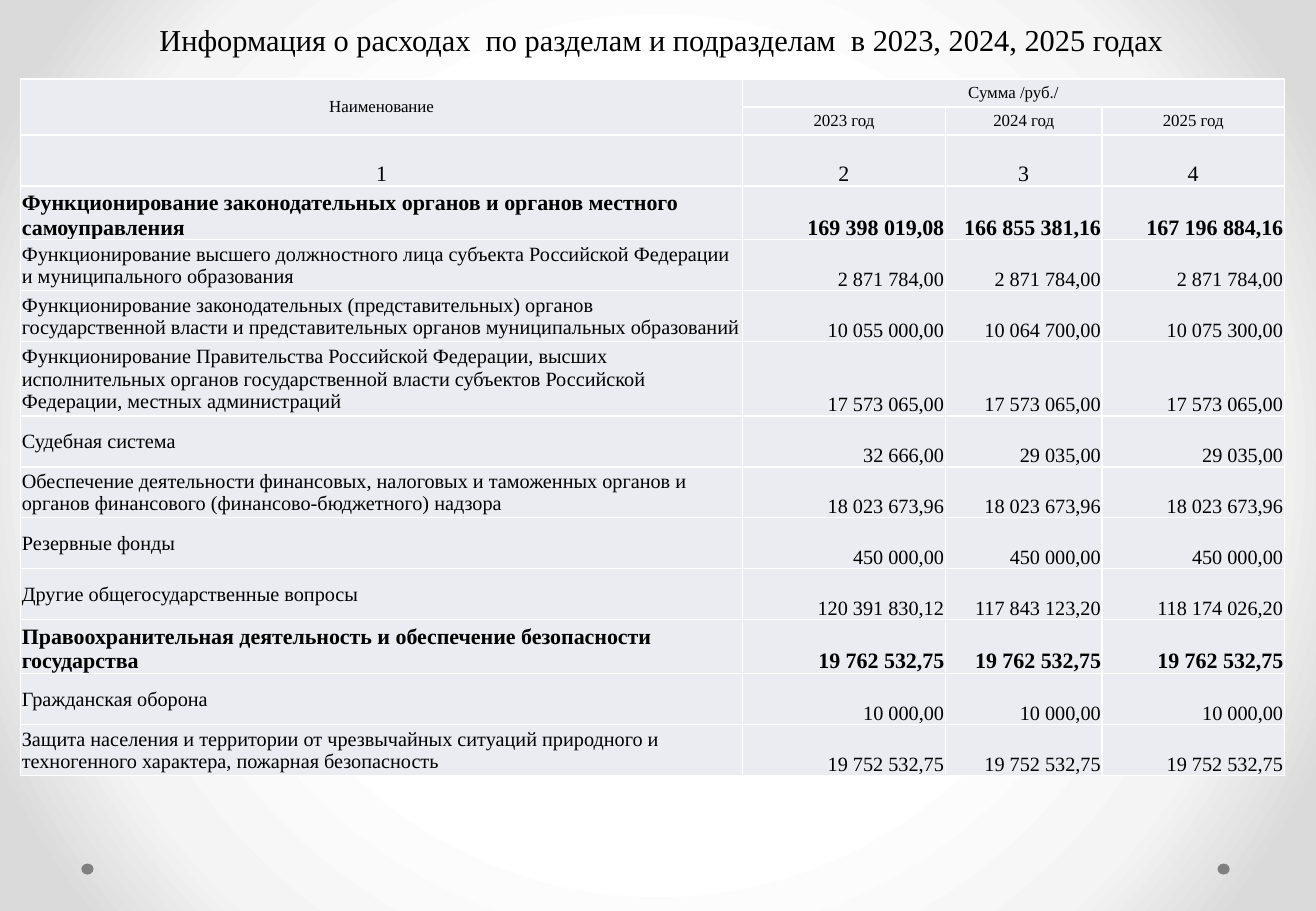
from dataclasses import dataclass

import lxml.etree
import pptx
import pptx.dml.color
import pptx.enum.shapes
import pptx.enum.text
import pptx.oxml
import pptx.oxml.ns
import pptx.util

Inches = pptx.util.Inches
ALIGN = pptx.enum.text.PP_ALIGN
ANCHOR = pptx.enum.text.MSO_ANCHOR

FONT = "Times New Roman"
COLORS = {"text": "000000", "cell": "EAECF2", "border": "FFFFFF", "dot": "808080"}
BACKGROUND_STOPS = {50: "FFFFFF", 76: "F4F4F4", 92: "DADADA"}
COLUMN_WIDTHS = [5.94, 1.67, 1.29, 1.5]
HEADER_HEIGHT, ROW_HEIGHT = 0.23, 0.42


@dataclass
class Expense:
    name: str
    sums: list[str]
    is_section: bool = False


EXPENSES = [
    Expense("Функционирование законодательных органов и органов местного самоуправления",
            ["169 398 019,08", "166 855 381,16", "167 196 884,16"], True),
    Expense("Функционирование высшего должностного лица субъекта Российской Федерации "
            "и муниципального образования", ["2 871 784,00"] * 3),
    Expense("Функционирование законодательных (представительных) органов государственной "
            "власти и представительных органов муниципальных образований",
            ["10 055 000,00", "10 064 700,00", "10 075 300,00"]),
    Expense("Функционирование Правительства Российской Федерации, высших исполнительных "
            "органов государственной власти субъектов Российской Федерации, местных "
            "администраций", ["17 573 065,00"] * 3),
    Expense("Судебная система", ["32 666,00", "29 035,00", "29 035,00"]),
    Expense("Обеспечение деятельности финансовых, налоговых и таможенных органов и органов "
            "финансового (финансово-бюджетного) надзора", ["18 023 673,96"] * 3),
    Expense("Резервные фонды", ["450 000,00"] * 3),
    Expense("Другие общегосударственные вопросы",
            ["120 391 830,12", "117 843 123,20", "118 174 026,20"]),
    Expense("Правоохранительная деятельность и обеспечение безопасности государства",
            ["19 762 532,75"] * 3, True),
    Expense("Гражданская оборона", ["10 000,00"] * 3),
    Expense("Защита населения и территории от чрезвычайных ситуаций природного и "
            "техногенного характера, пожарная безопасность", ["19 752 532,75"] * 3),
]


def rgb(name: str) -> pptx.dml.color.RGBColor:
    return pptx.dml.color.RGBColor.from_string(COLORS[name])


def style_text(paragraph, size: float, align, bold: bool = False) -> None:
    paragraph.alignment = align
    paragraph.font.name = FONT
    paragraph.font.size = pptx.util.Pt(size)
    paragraph.font.bold = bold
    paragraph.font.color.rgb = rgb("text")


def paint_background(slide) -> None:
    """Radial gradient, light in the middle."""
    slide.background.fill.gradient()
    gradient = slide.element.find(".//" + pptx.oxml.ns.qn("a:gradFill"))
    stops = "".join(f'<a:gs pos="{pos * 1000}"><a:srgbClr val="{color}"/></a:gs>'
                    for pos, color in BACKGROUND_STOPS.items())
    radial = pptx.oxml.parse_xml(
        f'<a:gradFill {pptx.oxml.ns.nsdecls("a")} rotWithShape="1"><a:gsLst>{stops}</a:gsLst>'
        '<a:path path="circle"><a:fillToRect l="50000" t="50000" r="50000" b="50000"/>'
        '</a:path></a:gradFill>')
    gradient.getparent().replace(gradient, radial)


def add_dot(slide, left: float) -> None:
    dot = slide.shapes.add_shape(pptx.enum.shapes.MSO_SHAPE.OVAL, Inches(left), Inches(7.11),
                                 Inches(0.1), Inches(0.09))
    dot.shadow.inherit = False
    dot.fill.solid()
    dot.fill.fore_color.rgb = rgb("dot")
    dot.line.fill.background()


def add_borders(cell) -> None:
    properties = cell._tc.get_or_add_tcPr()
    for side in ("lnL", "lnR", "lnT", "lnB"):
        properties.append(pptx.oxml.parse_xml(
            f'<a:{side} {pptx.oxml.ns.nsdecls("a")} w="12700"><a:solidFill>'
            f'<a:srgbClr val="{COLORS["border"]}"/></a:solidFill></a:{side}>'))


def fill_cell(cell, text: str, size: float, align, anchor, inset: float = 0.01,
              bold: bool = False) -> None:
    cell.margin_left = cell.margin_right = cell.margin_top = Inches(inset)
    cell.margin_bottom = 0
    cell.vertical_anchor = anchor
    add_borders(cell)
    cell.fill.solid()
    cell.fill.fore_color.rgb = rgb("cell")
    cell.text = text
    style_text(cell.text_frame.paragraphs[0], size, align, bold)


def add_expense_table(slide) -> None:
    heights = [HEADER_HEIGHT] * 2 + [ROW_HEIGHT] * (len(EXPENSES) + 1)
    table = slide.shapes.add_table(
        len(heights), len(COLUMN_WIDTHS), Inches(0.17), Inches(0.65),
        Inches(sum(COLUMN_WIDTHS)), Inches(sum(heights))).table
    table.first_row = table.horz_banding = False
    for column, width in zip(table.columns, COLUMN_WIDTHS):
        column.width = Inches(width)
    for row, height in zip(table.rows, heights):
        row.height = Inches(height)

    # Header rows and column numbers
    headers = [["Наименование", "Сумма /руб./", "", ""],
               ["", "2023 год", "2024 год", "2025 год"]]
    for r, labels in enumerate(headers):
        for c, label in enumerate(labels):
            fill_cell(table.cell(r, c), label, 10, ALIGN.CENTER, ANCHOR.MIDDLE, inset=0)
    table.cell(0, 0).merge(table.cell(1, 0))
    table.cell(0, 1).merge(table.cell(0, 3))
    for c in range(len(COLUMN_WIDTHS)):
        fill_cell(table.cell(2, c), str(c + 1), 13, ALIGN.CENTER, ANCHOR.BOTTOM)

    # Sections and subsections
    for r, expense in enumerate(EXPENSES, start=3):
        size = 13 if expense.is_section else 12
        name_anchor = ANCHOR.BOTTOM if expense.is_section else ANCHOR.MIDDLE
        fill_cell(table.cell(r, 0), expense.name, size, ALIGN.LEFT, name_anchor,
                  bold=expense.is_section)
        for c, amount in enumerate(expense.sums, start=1):
            fill_cell(table.cell(r, c), amount, size, ALIGN.RIGHT, ANCHOR.BOTTOM,
                      bold=expense.is_section)


def add_title(slide) -> None:
    title = slide.shapes.title
    title.left, title.top = Inches(0.25), Inches(0.12)
    title.width, title.height = Inches(10.39), Inches(0.4)
    frame = title.text_frame
    frame.text = "Информация о расходах  по разделам и подразделам  в 2023, 2024, 2025 годах"
    frame.word_wrap = True
    frame.auto_size = pptx.enum.text.MSO_AUTO_SIZE.SHAPE_TO_FIT_TEXT
    frame.vertical_anchor = ANCHOR.TOP
    style_text(frame.paragraphs[0], 18, ALIGN.CENTER)


def main() -> None:
    presentation = pptx.Presentation()
    presentation.slide_width, presentation.slide_height = Inches(10.83), Inches(7.5)
    slide = presentation.slides.add_slide(presentation.slide_layouts[5])
    paint_background(slide)
    for left in (10.02, 0.67):
        add_dot(slide, left)
    add_title(slide)
    add_expense_table(slide)
    presentation.save("out.pptx")


if __name__ == "__main__":
    main()
